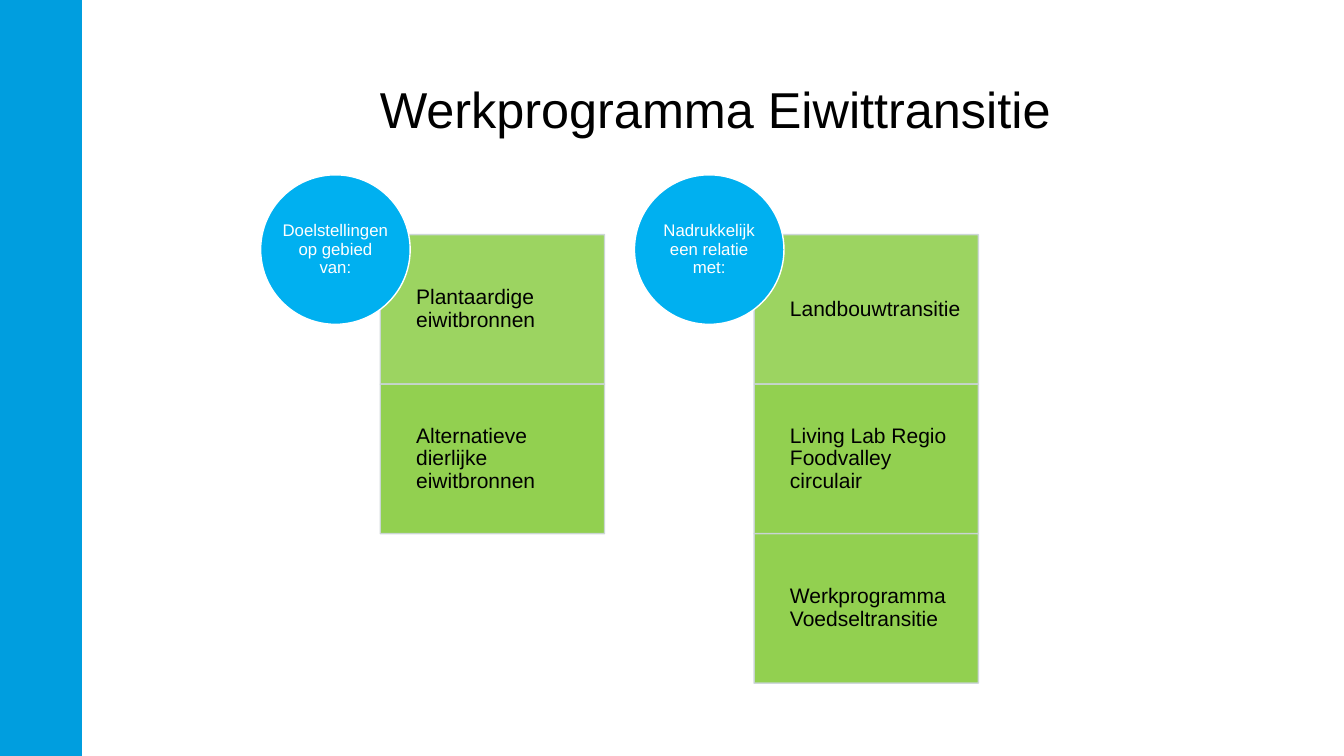
from dataclasses import dataclass

import pptx
import pptx.dml.color
import pptx.enum.shapes
import pptx.enum.text
import pptx.oxml
import pptx.oxml.ns
import pptx.util

Pt = pptx.util.Pt
MSO_SHAPE = pptx.enum.shapes.MSO_SHAPE
PP_ALIGN = pptx.enum.text.PP_ALIGN


@dataclass(frozen=True)
class Theme:
    font: str = "Arial"
    rail: str = "009EDF"
    circle: str = "00B0F0"
    cell: str = "92D050"
    cell_border: str = "CCD5DA"
    light: str = "FFFFFF"
    dark: str = "000000"
    title_size: float = 36
    cell_size: float = 15
    circle_size: float = 12


THEME = Theme()
SLIDE_WIDTH, SLIDE_HEIGHT = 960, 540
UNIT = 106.8
COLUMNS_LEFT, COLUMNS_TOP = 186.2, 124.9
COLUMN_PITCH = 2.5 * UNIT
COLUMNS = [
    ("Doelstellingen op gebied van:",
     ["Plantaardige eiwitbronnen", "Alternatieve dierlijke eiwitbronnen"]),
    ("Nadrukkelijk een relatie met:",
     ["Landbouwtransitie", "Living Lab Regio Foodvalley circulair",
      "Werkprogramma Voedseltransitie"]),
]


def rgb(value):
    return pptx.dml.color.RGBColor.from_string(value)


def set_opacity(fill_parent, percent):
    color = fill_parent.find(".//" + pptx.oxml.ns.qn("a:srgbClr"))
    namespace = pptx.oxml.ns.nsdecls("a")
    color.append(pptx.oxml.parse_xml(f'<a:alpha {namespace} val="{percent * 1000}"/>'))


def add_shape(slide, kind, box, fill, border=None):
    shape = slide.shapes.add_shape(kind, *map(Pt, box))
    shape.shadow.inherit = False
    shape.fill.solid()
    shape.fill.fore_color.rgb = rgb(fill)
    if border:
        shape.line.color.rgb = rgb(border)
        shape.line.width = Pt(1)
    else:
        shape.line.fill.background()
    return shape


def write_text(shape, text, size, color, alignment, insets, line_spacing=0.9):
    frame = shape.text_frame
    frame.text = text
    frame.word_wrap = True
    frame.vertical_anchor = pptx.enum.text.MSO_ANCHOR.MIDDLE
    frame.margin_left, frame.margin_top, frame.margin_right, frame.margin_bottom = map(Pt, insets)
    paragraph = frame.paragraphs[0]
    paragraph.alignment = alignment
    paragraph.line_spacing = line_spacing
    font = paragraph.runs[0].font
    font.name = THEME.font
    font.size = Pt(size)
    font.color.rgb = rgb(color)


def place_title(slide, box, text):
    title = slide.shapes.title
    title.left, title.top, title.width, title.height = map(Pt, box)
    write_text(title, text, THEME.title_size, THEME.dark, PP_ALIGN.CENTER,
               (7.2, 3.6, 7.2, 3.6), line_spacing=1.0)


def add_column(slide, left, top, heading, items):
    cell_left, cell_top, cell_width = left + 0.8 * UNIT, top + 0.4 * UNIT, 1.5 * UNIT
    for row, item in enumerate(items):
        box = (cell_left, cell_top + row * UNIT, cell_width, UNIT)
        cell = add_shape(slide, MSO_SHAPE.RECTANGLE, box, THEME.cell, THEME.cell_border)
        set_opacity(cell.line._ln, 90)
        if row == 0:
            set_opacity(cell._element.spPr.find(pptx.oxml.ns.qn("a:solidFill")), 90)
        write_text(cell, item, THEME.cell_size, THEME.dark, PP_ALIGN.LEFT,
                   (0.16 * cell_width, 8.5, 8.5, 8.5))
    circle = add_shape(slide, MSO_SHAPE.OVAL, (left, top, UNIT, UNIT), THEME.circle, THEME.light)
    write_text(circle, heading, THEME.circle_size, THEME.light, PP_ALIGN.CENTER, (0, 0, 0, 0))


def build_slide(presentation):
    slide = presentation.slides.add_slide(presentation.slide_layouts[5])
    add_shape(slide, MSO_SHAPE.RECTANGLE, (0, 0, 58.5, SLIDE_HEIGHT), THEME.rail)
    place_title(slide, (172, 52, 678, 51), "Werkprogramma Eiwittransitie")
    for index, (heading, items) in enumerate(COLUMNS):
        add_column(slide, COLUMNS_LEFT + index * COLUMN_PITCH, COLUMNS_TOP, heading, items)


def main():
    presentation = pptx.Presentation()
    presentation.slide_width = Pt(SLIDE_WIDTH)
    presentation.slide_height = Pt(SLIDE_HEIGHT)
    build_slide(presentation)
    presentation.save("out.pptx")


if __name__ == "__main__":
    main()
